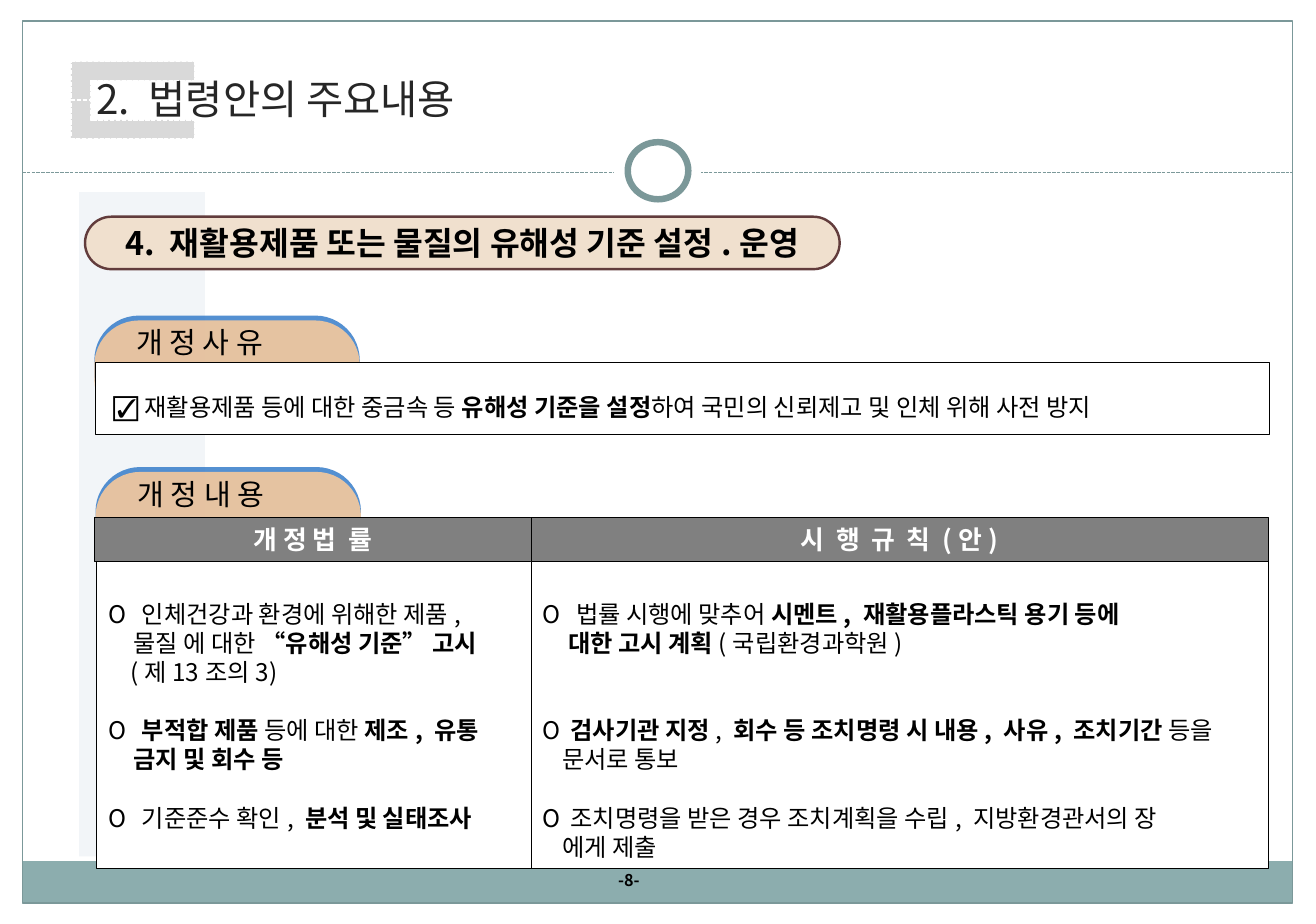
from lxml import etree
from pptx import Presentation
from pptx import util as u
from pptx.dml.color import RGBColor
from pptx.enum import dml, shapes, text
from pptx.oxml.ns import qn

PX = 9144  # 100 px to the inch
FONT = "Noto Sans CJK KR"
TEAL = "7B9899"
LEFT, CENTER = text.PP_ALIGN.LEFT, text.PP_ALIGN.CENTER
RECT = shapes.MSO_SHAPE.RECTANGLE
ROUNDED = shapes.MSO_SHAPE.ROUNDED_RECTANGLE
OVAL = shapes.MSO_SHAPE.OVAL


def px(*lengths):
    return [length * PX for length in lengths]


def rgb(color):
    return RGBColor.from_string(color)


def paint(shape, fill=None, line=None, width=0.25):
    shape.shadow.inherit = False
    if fill:
        shape.fill.solid()
        shape.fill.fore_color.rgb = rgb(fill)
    else:
        shape.fill.background()
    if line:
        shape.line.color.rgb = rgb(line)
        shape.line.width = u.Pt(width)
    else:
        shape.line.fill.background()
    return shape


def add_box(slide, kind, box, fill=None, line=None, width=0.25, radius=None):
    shape = paint(slide.shapes.add_shape(kind, *px(*box)), fill, line, width)
    if radius is not None:
        shape.adjustments[0] = radius
    return shape


def set_frame(shape, insets=(10, 5, 10, 5), anchor=text.MSO_ANCHOR.MIDDLE, wrap=True):
    frame = shape.text_frame
    frame.word_wrap = wrap
    frame.vertical_anchor = anchor
    (frame.margin_left, frame.margin_top,
     frame.margin_right, frame.margin_bottom) = px(*insets)
    return frame


def write(paragraph, content, size, color="000000", align=LEFT):
    """Write content into the paragraph; parts between asterisks are bold."""
    paragraph.alignment = align
    font = paragraph.font
    font.size, font.name, font.color.rgb = u.Pt(size), FONT, rgb(color)
    for i, part in enumerate(content.split("*")):
        if part:
            run = paragraph.add_run()
            run.text = part
            run.font.bold = i % 2 == 1
            run.font.name = FONT
            fonts = run.font._element
            etree.SubElement(fonts, qn("a:ea")).set("typeface", FONT)


def add_label(slide, box, content, size, color="000000", insets=(10, 5, 10, 5), wrap=True):
    label = slide.shapes.add_textbox(*px(*box))
    write(set_frame(label, insets, wrap=wrap).paragraphs[0], content, size, color)


def draw_page_frame(slide, x, y, w, h):
    add_box(slide, RECT, (x, y + h - 36, w, 36), "8CADAE")
    add_box(slide, RECT, (x, y, w, h), None, TEAL, 0.75)
    divider_y = y + 130
    divider = slide.shapes.add_connector(
        shapes.MSO_CONNECTOR.STRAIGHT, *px(x, divider_y, x + w, divider_y))
    divider.line.color.rgb = rgb("7C999A")
    divider.line.width = u.Pt(0.75)
    divider.line.dash_style = dml.MSO_LINE.SQUARE_DOT
    etree.SubElement(divider._element.spPr, qn("a:effectLst"))
    add_box(slide, OVAL, (x + 508, divider_y - 37, 75, 70), "FFFFFF")
    add_box(slide, OVAL, (x + 520, divider_y - 26, 52, 49), "FFFFFF", TEAL, 4)


def draw_title(slide, x, y, content):
    add_label(slide, (x + 12, y + 5, 360, 53), content, 25, "262626", wrap=False)
    middle = y + 33
    for side in (1, -1):
        outline = [(17, 0), (17, 17), (106, 17), (106, 33), (0, 33)]
        builder = slide.shapes.build_freeform(x, middle, scale=PX)
        builder.add_line_segments([(x + dx, middle + side * dy) for dx, dy in outline])
        bracket = paint(builder.convert_to_shape(), "D9D9D9", "FFFFFF", 0.9)
        bracket.line.dash_style = dml.MSO_LINE.SQUARE_DOT


def draw_heading(slide, box, content):
    pill = add_box(slide, ROUNDED, box, "F0E0CE", "623C3C", 1.5, radius=0.5)
    write(set_frame(pill, wrap=False).paragraphs[0], content, 20, align=CENTER)


def draw_tab(slide, x, y, content):
    """Draw a translucent tab with a blue edge on its top."""
    tab = add_box(slide, ROUNDED, (x, y, 228, 89), "FFCC99", radius=0.43)
    color = tab._element.spPr.find(qn("a:solidFill"))[0]
    etree.SubElement(color, qn("a:alpha")).set("val", "85000")
    effects = tab._element.spPr.find(qn("a:effectLst"))
    shadow = etree.SubElement(effects, qn("a:outerShdw"), blurRad="0",
                              dist=str(u.Pt(3)), dir="16200000", rotWithShape="0")
    etree.SubElement(shadow, qn("a:srgbClr")).set("val", "377DC9")
    add_label(slide, (x - 8, y - 3, 228, 43), content, 18, insets=(44, 0, 0, 0))


def draw_reason(slide, box, content):
    x, y, w, h = box
    draw_tab(slide, x - 1, y - 36, "개 정 사 유")
    reason = add_box(slide, RECT, box, "FFFFFF", "000000")
    write(set_frame(reason, (15, 14, 10, 0)).paragraphs[0], content, 15)
    mark = reason.text_frame.paragraphs[0].runs[0]
    mark.font.size = u.Pt(16)


def draw_clauses(slide, box, lines):
    """Each line is its gap above in points, its indent in px and its words."""
    clauses = add_box(slide, RECT, box, "FFFFFF", "000000")
    frame = set_frame(clauses, (10, 32, 10, 5), text.MSO_ANCHOR.TOP)
    for i, (gap, indent, content) in enumerate(lines):
        paragraph = frame.add_paragraph() if i else frame.paragraphs[0]
        write(paragraph, content, 15)
        paragraph.line_spacing = u.Pt(18)
        paragraph.space_before = u.Pt(gap)
        hanging = -indent if content.startswith("O\t") else 0
        properties = paragraph._p.get_or_add_pPr()
        properties.set("marL", str(indent * PX))
        properties.set("indent", str(hanging * PX))


def draw_revision(slide, x, y, columns):
    draw_tab(slide, x + 1, y - 39, "개 정 내 용")
    left = x
    for width, header, lines in columns:
        draw_clauses(slide, (left + (2 if left == x else 0), y + 38,
                             width - (2 if left == x else 0), 263), lines)
        head = add_box(slide, RECT, (left, y, width, 38), "808080", "000000")
        write(set_frame(head).paragraphs[0], header, 16, "FFFFFF", CENTER)
        left += width


LAW = [
    (0, 29, "O\t인체건강과 환경에 위해한 제품,"),
    (0, 22, "물질 에 대한 *“유해성 기준” 고시*"),
    (0, 19, "(제13조의3)"),
    (18, 29, "O\t*부적합 제품 *등에 대한 *제조, 유통*"),
    (0, 22, "*금지 및 회수 등*"),
    (18, 29, "O\t기준준수 확인, *분석 및 실태조사*"),
]
RULES = [
    (0, 29, "O\t법률 시행에 맞추어 *시멘트, 재활용플라스틱 용기 등에*"),
    (0, 22, "*대한 고시 계획*(국립환경과학원)"),
    (36, 24, "O\t*검사기관 지정*, *회수 등 조치명령 시 내용, 사유, 조치기간 *등을"),
    (0, 17, "문서로 통보"),
    (18, 24, "O\t조치명령을 받은 경우 조치계획을 수립, 지방환경관서의 장"),
    (0, 17, "에게 제출"),
]


def main():
    deck = Presentation()
    deck.slide_width, deck.slide_height = px(1130, 793)
    slide = deck.slides.add_slide(deck.slide_layouts[6])
    draw_page_frame(slide, 19, 18, 1091, 757)
    add_box(slide, RECT, (68, 165, 108, 570), "F2F5F8")
    draw_heading(slide, (73, 186, 648, 45), "*4. 재활용제품 또는 물질의 유해성 기준 설정.운영*")
    draw_title(slide, 61, 53, "2. 법령안의 주요내용")
    add_label(slide, (521, 742, 41, 27), "*-8-*", 10)
    draw_revision(slide, 81, 444, [
        (375, "*개 정 법  률*", LAW),
        (633, "*시  행  규  칙 (안)*", RULES),
    ])
    draw_reason(slide, (82, 311, 1008, 62),
                "☑ **재활용제품 등에 대한 중금속 등 *유해성 기준을 설정*하여 국민의 신뢰제고 및 인체 위해 사전 방지")
    deck.save("out.pptx")


if __name__ == "__main__":
    main()
